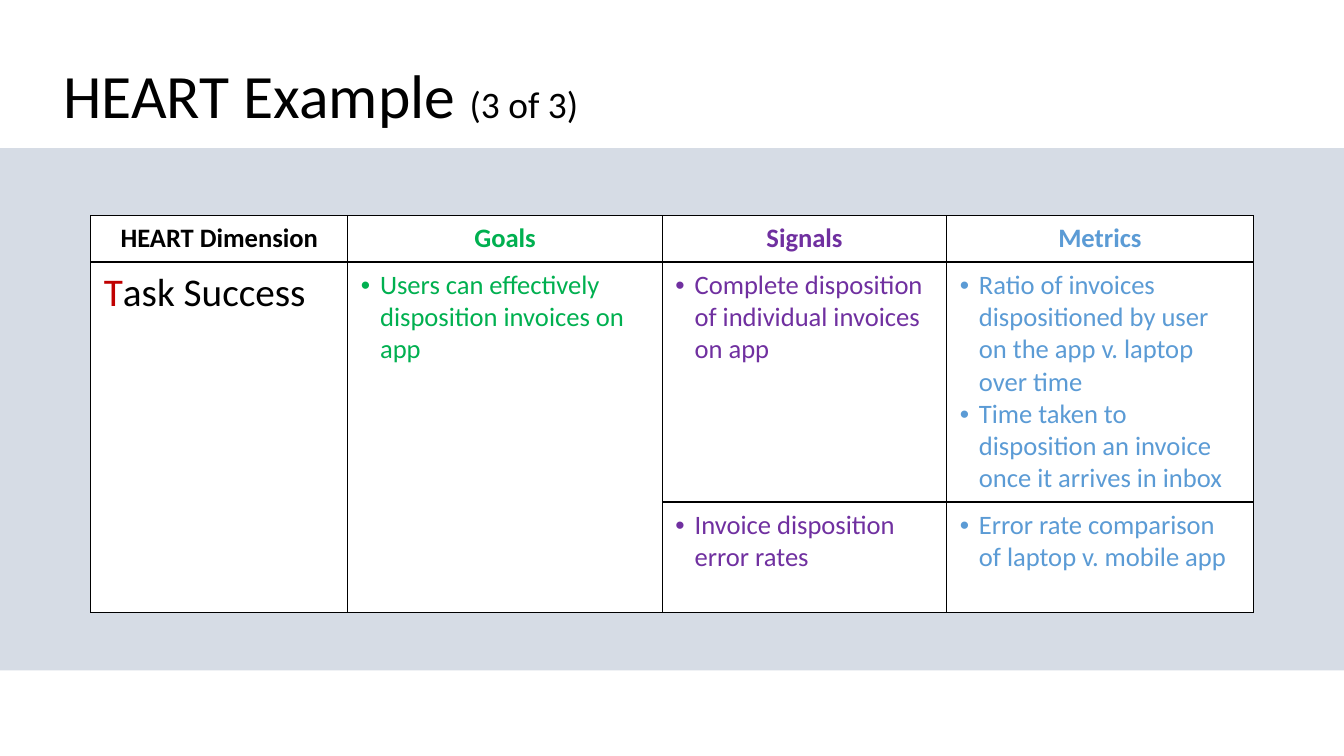
from dataclasses import dataclass

from lxml import etree
from pptx import Presentation
from pptx.dml.color import RGBColor
from pptx.enum.shapes import MSO_SHAPE
from pptx.enum.text import MSO_ANCHOR, PP_ALIGN
from pptx.oxml.ns import qn
from pptx.slide import Slide
from pptx.table import Table, _Cell
from pptx.util import Inches, Pt

RECTANGLE = MSO_SHAPE.RECTANGLE
LEFT, CENTER = PP_ALIGN.LEFT, PP_ALIGN.CENTER
TOP, MIDDLE, BOTTOM = MSO_ANCHOR.TOP, MSO_ANCHOR.MIDDLE, MSO_ANCHOR.BOTTOM

FONT = "Calibri"
BLACK, WHITE, RED, PALE_BLUE = "000000", "FFFFFF", "C00000", "D6DCE5"
TITLE_SIZE, PAGE_SIZE, DIMENSION_SIZE, BODY_SIZE = 44, 26.7, 28, 19
ROW_HEIGHTS = (0.45, 2.37, 1.1)
BULLET_INDENT = 0.19


@dataclass
class Column:
    heading: str
    color: str
    width: float
    bullets: tuple[tuple[str, ...], ...] = ()


COLUMNS = (
    Column("HEART Dimension", BLACK, 2.55),
    Column("Goals", "00B050", 3.12, (
        ("Users can effectively disposition invoices on app",),
    )),
    Column("Signals", "7030A0", 2.82, (
        ("Complete disposition of individual invoices on app",),
        ("Invoice disposition error rates",),
    )),
    Column("Metrics", "5B9BD5", 3.04, (
        ("Ratio of invoices dispositioned by user on the app v. laptop over time",
         "Time taken to disposition an invoice once it arrives in inbox"),
        ("Error rate comparison of laptop v. mobile app",),
    )),
)


def rgb(color: str) -> RGBColor:
    return RGBColor.from_string(color)


def style_font(font, size: float, color: str, bold: bool = False) -> None:
    font.name = FONT
    font.size = Pt(size)
    font.bold = bold
    font.color.rgb = rgb(color)


def add_band(slide: Slide, width: int) -> None:
    band = slide.shapes.add_shape(RECTANGLE, 0, Inches(1.47), width, Inches(5.18))
    band.shadow.inherit = False
    band.fill.solid()
    band.fill.fore_color.rgb = rgb(PALE_BLUE)
    band.line.fill.background()


def format_title(slide: Slide) -> None:
    title = slide.shapes.title
    title.left, title.top = Inches(0.53), Inches(0.59)
    title.width, title.height = Inches(12.27), Inches(0.77)
    title.text_frame.vertical_anchor = BOTTOM
    paragraph = title.text_frame.paragraphs[0]
    paragraph.alignment = LEFT
    paragraph.line_spacing = 0.9
    for text, size in (("HEART Example ", TITLE_SIZE), ("(3 of 3)", PAGE_SIZE)):
        run = paragraph.add_run()
        run.text = text
        style_font(run.font, size, BLACK)


def format_cell(cell: _Cell, anchor: MSO_ANCHOR) -> None:
    """Set the margins, black borders and white fill of a cell."""
    cell.margin_left = cell.margin_right = Inches(0.13)
    cell.margin_top = cell.margin_bottom = Inches(0.07)
    cell.vertical_anchor = anchor
    properties = cell._tc.get_or_add_tcPr()
    for side in ("a:lnL", "a:lnR", "a:lnT", "a:lnB"):
        border = etree.SubElement(properties, qn(side), w=str(Pt(1)))
        fill = etree.SubElement(border, qn("a:solidFill"))
        etree.SubElement(fill, qn("a:srgbClr"), val=BLACK)
    cell.fill.solid()
    cell.fill.fore_color.rgb = rgb(WHITE)


def write_heading(cell: _Cell, column: Column) -> None:
    paragraph = cell.text_frame.paragraphs[0]
    paragraph.text = column.heading
    paragraph.alignment = CENTER
    style_font(paragraph.font, BODY_SIZE, column.color, bold=True)


def write_dimension(cell: _Cell) -> None:
    paragraph = cell.text_frame.paragraphs[0]
    for text, color in (("T", RED), ("ask Success", BLACK)):
        run = paragraph.add_run()
        run.text = text
        style_font(run.font, DIMENSION_SIZE, color)


def write_bullets(cell: _Cell, bullets: tuple[str, ...], color: str) -> None:
    cell.text_frame.text = "\n".join(bullets)
    for paragraph in cell.text_frame.paragraphs:
        style_font(paragraph.font, BODY_SIZE, color)
        properties = paragraph._p.get_or_add_pPr()
        properties.set("marL", str(Inches(BULLET_INDENT)))
        properties.set("indent", str(-Inches(BULLET_INDENT)))
        bullet_font = etree.Element(qn("a:buFont"), typeface="Arial")
        bullet = etree.Element(qn("a:buChar"), char="•")
        properties.insert(0, bullet_font)
        properties.insert(1, bullet)


def add_heart_table(slide: Slide) -> Table:
    width = sum(column.width for column in COLUMNS)
    table = slide.shapes.add_table(
        len(ROW_HEIGHTS), len(COLUMNS), Inches(0.9), Inches(2.14),
        Inches(width), Inches(sum(ROW_HEIGHTS)),
    ).table
    table.horz_banding = False
    table.first_row = False
    for row, height in zip(table.rows, ROW_HEIGHTS):
        row.height = Inches(height)
    for index, column in enumerate(COLUMNS):
        table.columns[index].width = Inches(column.width)
        for row_index in range(len(ROW_HEIGHTS)):
            format_cell(table.cell(row_index, index), TOP if row_index else MIDDLE)
        write_heading(table.cell(0, index), column)
        for row_index, bullets in enumerate(column.bullets, start=1):
            write_bullets(table.cell(row_index, index), bullets, column.color)
        if len(column.bullets) < 2:
            table.cell(1, index).merge(table.cell(2, index))
    write_dimension(table.cell(1, 0))
    return table


def main() -> None:
    presentation = Presentation()
    presentation.slide_width = Inches(13.33)
    presentation.slide_height = Inches(7.5)
    slide = presentation.slides.add_slide(presentation.slide_layouts[5])
    add_band(slide, presentation.slide_width)
    format_title(slide)
    add_heart_table(slide)
    presentation.save("out.pptx")


if __name__ == "__main__":
    main()
